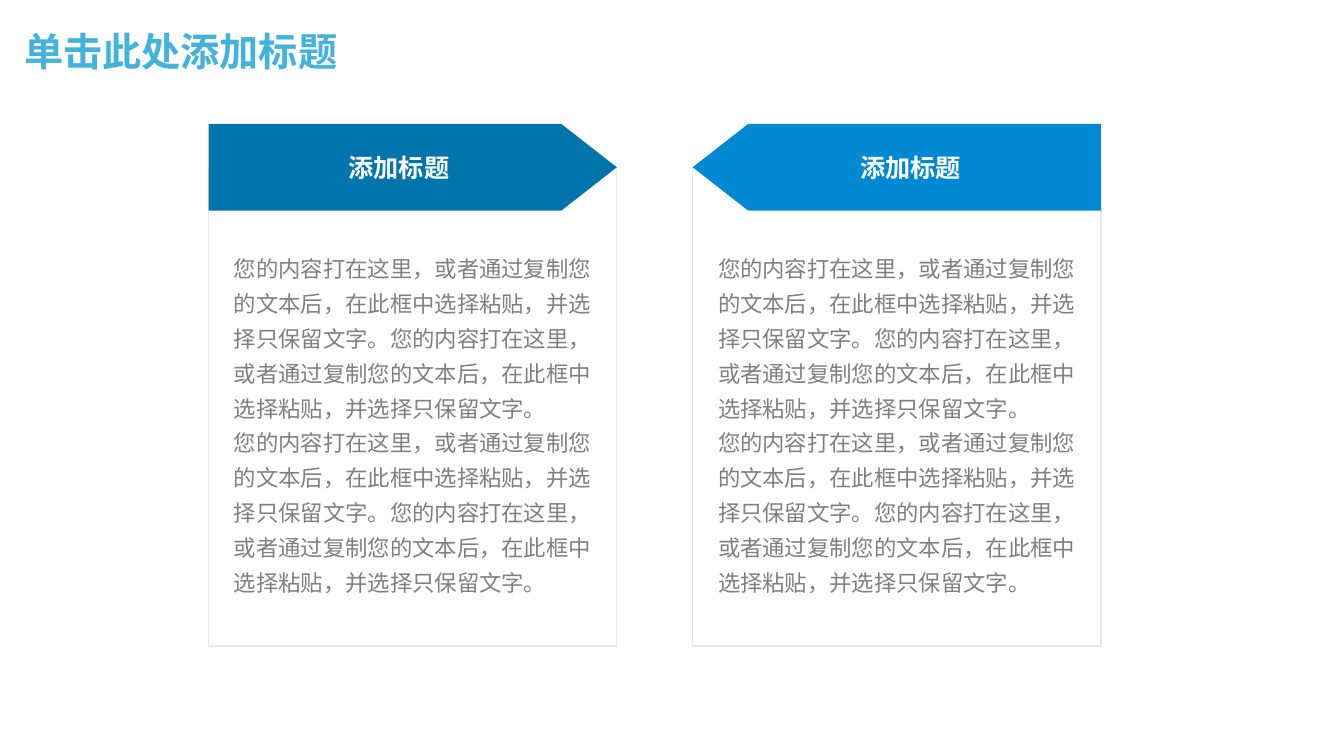
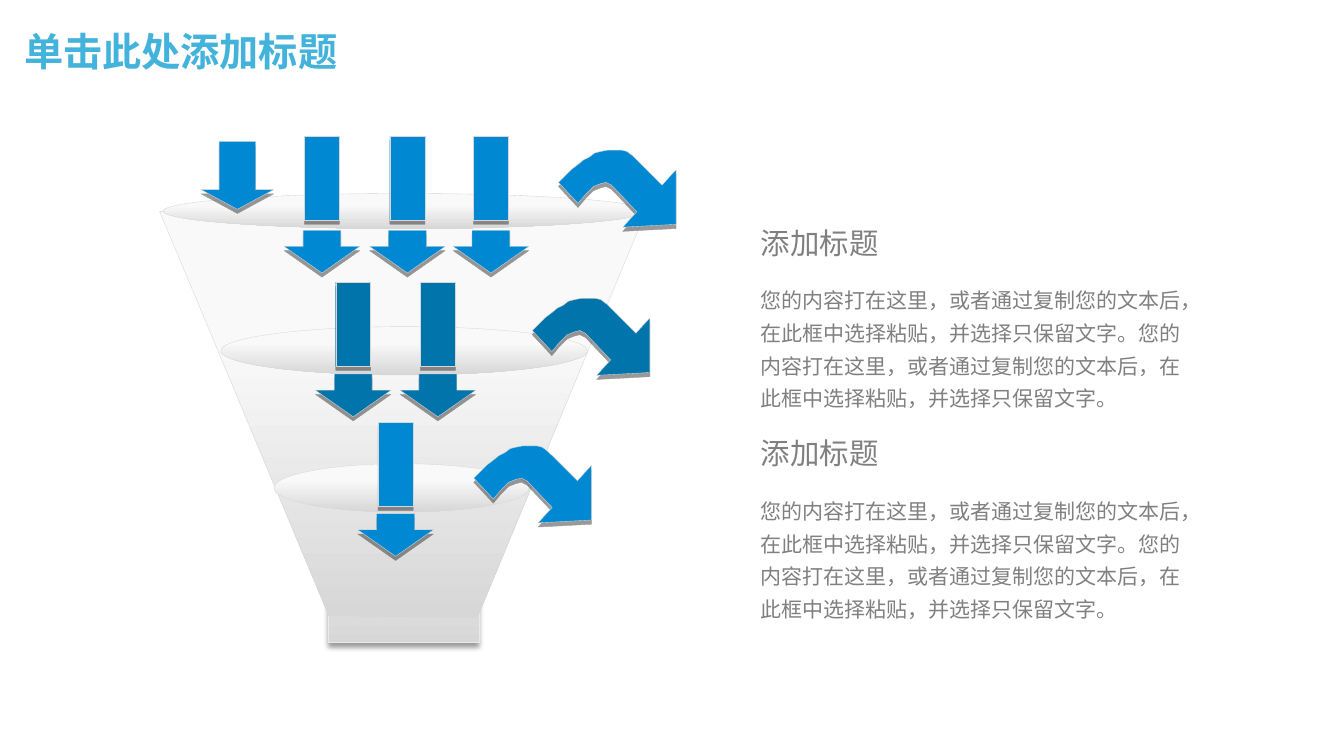
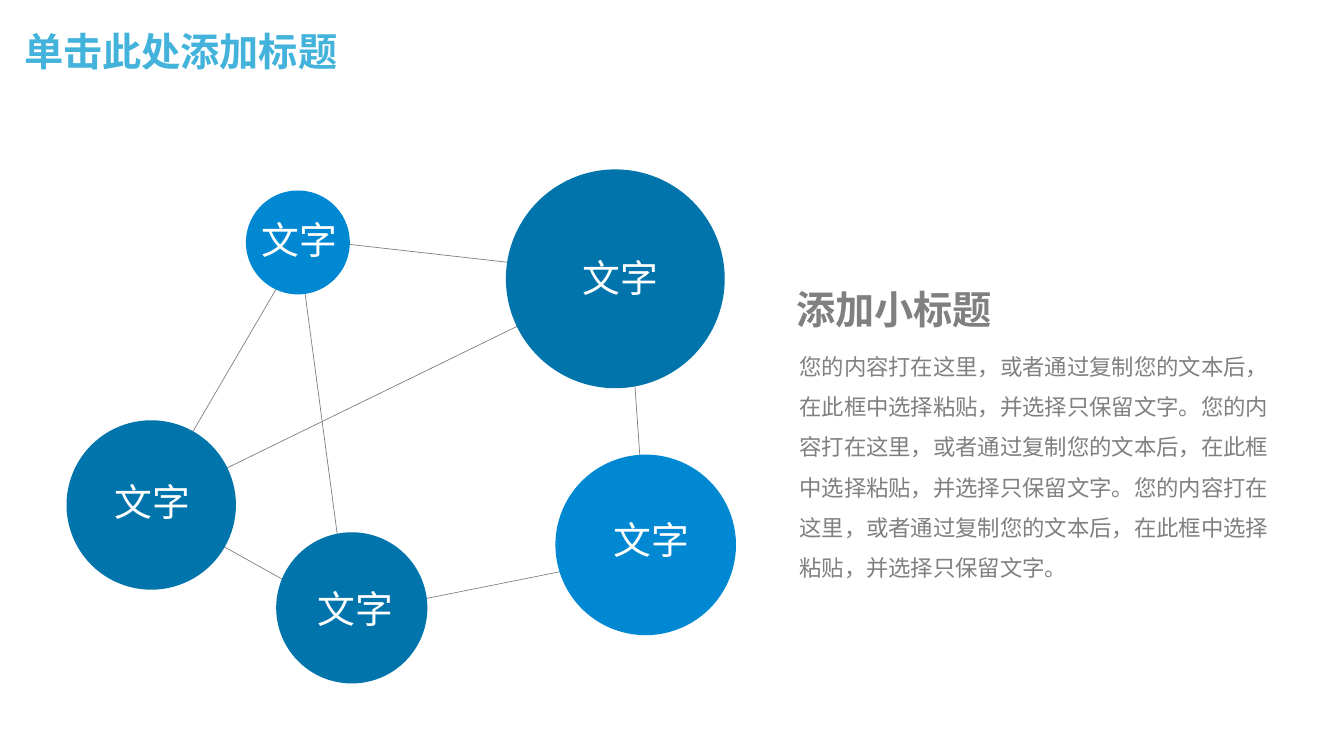
from dataclasses import dataclass
from typing import Any, Optional

from lxml import etree
from pptx import Presentation
from pptx import util as u
from pptx.dml.color import RGBColor
from pptx.enum import shapes, text
from pptx.oxml.ns import qn

Point = tuple[float, float]
Preset = shapes.MSO_SHAPE


# Theme
@dataclass(frozen=True)
class Theme:
    title: str = "43B3DC"
    deep: str = "0274AC"
    bright: str = "0089D2"
    grey: str = "808080"
    white: str = "FFFFFF"
    frame: str = "E8E8E6"
    edge: str = "D7D7D7"
    stem_edge: str = "EAEAEA"
    glass: tuple[str, str] = ("F9F9F9", "D7D7D7")
    title_font: str = "Montserrat"
    body_font: str = "Noto Sans CJK SC"
    title_size: float = 28
    circle_size: float = 27
    heading_size: float = 21
    banner_size: float = 18
    body_size: float = 16
    note_size: float = 15


THEME = Theme()
SENTENCE = "您的内容打在这里，或者通过复制您的文本后，在此框中选择粘贴，并选择只保留文字。"


# Content records: all lengths in points
@dataclass(frozen=True)
class Panel:
    left: float
    color: str
    flipped: bool


@dataclass(frozen=True)
class DropRow:
    top: float
    head_top: float
    centers: tuple[float, ...]
    color: str


@dataclass(frozen=True)
class Turn:
    left: float
    top: float
    color: str


@dataclass(frozen=True)
class Node:
    left: float
    top: float
    diameter: float
    color: str
    label_at: Point


PANELS = (Panel(149, THEME.deep, False), Panel(494.8, THEME.bright, True))

DROP_ROWS = (
    DropRow(97.2, 164.5, (230, 291, 350.7), THEME.bright),
    DropRow(201.6, 267.2, (252.3, 312.8), THEME.deep),
    DropRow(301.7, 366.9, (282.6,), THEME.bright),
)
TURNS = (
    Turn(380.2, 213.1, THEME.deep),
    Turn(338.4, 318.5, THEME.bright),
    Turn(398.9, 107.3, THEME.bright),
)
TURN_OUTLINE: tuple[Point, ...] = (
    (84.2, 14.4), (84.2, 52.8), (45.6, 55), (56, 44), (38.2, 25.2), (34.4, 23),
    (30.2, 23.6), (25.2, 26.4), (19, 31.5), (13.7, 37.6), (0, 23.2), (9.4, 13.7),
    (13, 10.6), (18, 7), (22.2, 4.8), (25.9, 2.2), (30.2, 0.7), (35, 0),
    (40, 0), (44.6, 0), (49, 1.4), (53.3, 3.8), (56.2, 6.6), (74.2, 24.6),
)
CONE: tuple[Point, ...] = ((114.5, 151.2), (234.7, 440), (341.3, 440.6), (460.8, 151.9))
CONE_RINGS = (
    (116.6, 138.2, 344.9, 25.2),
    (157.7, 233.3, 262, 34.6),
    (195.8, 331.2, 182.2, 34.6),
)

NODES = (
    Node(47.5, 300.2, 121, THEME.deep, (74.9, 338.4)),
    Node(361.4, 121, 156.3, THEME.deep, (409, 178.6)),
    Node(175.7, 136.1, 74.2, THEME.bright, (180, 151.2)),
    Node(197.3, 380.2, 108, THEME.deep, (219.6, 414.7)),
    Node(396.7, 324.7, 129, THEME.bright, (431.3, 365.8)),
)
NETWORK_RING: tuple[Point, ...] = (
    (106.6, 361.4), (218.2, 170.6), (447.8, 196.6), (461.5, 396), (247, 439.2),
)
NETWORK_CHORDS = (
    ((213.1, 173.5), (250.6, 454.3)),
    ((108, 360.7), (439.9, 198.7)),
)


# Drawing helpers
def rgb(color: str) -> RGBColor:
    return RGBColor.from_string(color)


def add_shadow(shape: Any, blur: float) -> None:
    effects = shape.element.spPr.find(qn("a:effectLst"))
    outer = etree.SubElement(
        effects, qn("a:outerShdw"), blurRad=str(u.Pt(blur)), dist=str(u.Pt(3)),
        dir="5400000", algn="t", rotWithShape="0",
    )
    black = etree.SubElement(outer, qn("a:srgbClr"), val="000000")
    etree.SubElement(black, qn("a:alpha"), val="40000")


def paint(shape: Any, fill: Any = None, line: Optional[str] = None,
          line_width: float = 0.25, shadow_blur: Optional[float] = None) -> Any:
    """Fill with a colour, a (top, bottom) gradient or nothing; set line and shadow."""
    if fill is None:
        shape.fill.background()
    elif isinstance(fill, str):
        shape.fill.solid()
        shape.fill.fore_color.rgb = rgb(fill)
    else:
        shape.fill.gradient()
        shape.fill.gradient_angle = 270
        for stop, color, position in zip(shape.fill.gradient_stops, fill, (0.33, 1)):
            stop.color.rgb = rgb(color)
            stop.position = position
    if line is None:
        shape.line.fill.background()
    else:
        shape.line.color.rgb = rgb(line)
        shape.line.width = u.Pt(line_width)
    shape.shadow.inherit = False
    if shadow_blur is not None:
        add_shadow(shape, shadow_blur)
    return shape


def add_preset(slide: Any, preset: Any, left: float, top: float,
               width: float, height: float, **look: Any) -> Any:
    shape = slide.shapes.add_shape(preset, u.Pt(left), u.Pt(top), u.Pt(width), u.Pt(height))
    return paint(shape, **look)


def add_outline(slide: Any, points: tuple[Point, ...], left: float = 0,
                top: float = 0, **look: Any) -> Any:
    builder = slide.shapes.build_freeform(*points[0], scale=float(u.Pt(1)))
    builder.add_line_segments(points[1:], close=True)
    return paint(builder.convert_to_shape(u.Pt(left), u.Pt(top)), **look)


def write(frame: Any, *paragraphs: str, size: float, color: str,
          font: str = THEME.body_font, bold: bool = False,
          align: Any = text.PP_ALIGN.LEFT, anchor: Any = text.MSO_ANCHOR.TOP,
          spacing: float = 1, wrap: bool = True, inset: Point = (7.2, 3.6)) -> None:
    frame.word_wrap = wrap
    frame.vertical_anchor = anchor
    frame.margin_left = frame.margin_right = u.Pt(inset[0])
    frame.margin_top = frame.margin_bottom = u.Pt(inset[1])
    for index, words in enumerate(paragraphs):
        paragraph = frame.add_paragraph() if index else frame.paragraphs[0]
        paragraph.alignment = align
        paragraph.line_spacing = spacing
        run = paragraph.add_run()
        run.text = words
        run.font.size = u.Pt(size)
        run.font.bold = bold
        run.font.color.rgb = rgb(color)
        run.font.name = font
        etree.SubElement(run.font._element, qn("a:ea"), typeface=THEME.body_font)


def add_text(slide: Any, left: float, top: float, width: float, height: float,
             *paragraphs: str, **style: Any) -> None:
    box = slide.shapes.add_textbox(u.Pt(left), u.Pt(top), u.Pt(width), u.Pt(height))
    write(box.text_frame, *paragraphs, **style)
    box.text_frame.auto_size = text.MSO_AUTO_SIZE.SHAPE_TO_FIT_TEXT


def add_line(slide: Any, start: Point, end: Point) -> None:
    line = slide.shapes.add_connector(
        shapes.MSO_CONNECTOR.STRAIGHT, *(u.Pt(value) for value in start + end))
    line.line.color.rgb = rgb(THEME.grey)
    line.line.width = u.Pt(0.5)
    etree.SubElement(line.element.spPr, qn("a:effectLst"))


def add_titled_slide(deck: Any) -> Any:
    slide = deck.slides.add_slide(deck.slide_layouts[5])
    title = slide.shapes.title
    title.left, title.top, title.width, title.height = map(u.Pt, (10, 10, 828, 57))
    write(title.text_frame, "单击此处添加标题", size=THEME.title_size, color=THEME.title,
          font=THEME.title_font, bold=True, anchor=text.MSO_ANCHOR.MIDDLE, spacing=0.9)
    return slide


# Slide 1: two facing panels
def build_panels(deck: Any) -> None:
    slide = add_titled_slide(deck)
    width = 291.6
    for panel in PANELS:
        add_preset(slide, Preset.RECTANGLE, panel.left, 119.5, width, 342,
                   fill=THEME.white, line=THEME.frame, line_width=1)
        banner = add_preset(slide, Preset.PENTAGON, panel.left, 88.5, width, 62,
                            fill=panel.color)
        banner.adjustments[0] = 0.64
        if panel.flipped:
            banner.element.spPr.find(qn("a:xfrm")).set("flipH", "1")
        write(banner.text_frame, "添加标题", size=THEME.banner_size, color=THEME.white,
              bold=True, align=text.PP_ALIGN.CENTER, anchor=text.MSO_ANCHOR.MIDDLE,
              wrap=False)
        add_text(slide, panel.left + 11, 172.8, 280, 259, SENTENCE * 2, SENTENCE * 2,
                 size=THEME.body_size, color=THEME.grey, spacing=1.3)


# Slide 2: funnel with falling and leaving arrows
def add_down_arrow(slide: Any, center: float, top: float, width: float,
                   height: float, head: float, **look: Any) -> None:
    arrow = add_preset(slide, Preset.DOWN_ARROW, center - width / 2, top, width, height, **look)
    arrow.adjustments[0] = 0.5
    arrow.adjustments[1] = head


def build_funnel(deck: Any) -> None:
    slide = add_titled_slide(deck)
    add_preset(slide, Preset.RECTANGLE, 234.7, 308.2, 107.3, 150.5,
               fill=THEME.glass, line=THEME.stem_edge, shadow_blur=4)
    add_outline(slide, CONE, fill=THEME.glass, line=THEME.edge)
    for ring in CONE_RINGS:
        add_preset(slide, Preset.OVAL, *ring, fill=THEME.glass, line=THEME.edge)

    for turn in TURNS:
        add_outline(slide, TURN_OUTLINE, turn.left, turn.top, fill=turn.color,
                    line=THEME.edge, shadow_blur=0)
    for row in DROP_ROWS:
        look = dict(fill=row.color, line=THEME.edge, shadow_blur=0)
        for center in row.centers:
            add_down_arrow(slide, center, row.head_top, 54, 30.5, 0.62, **look)
            add_preset(slide, Preset.RECTANGLE, center - 12.5, row.top, 25, 60, **look)
    add_down_arrow(slide, 169.6, 101, 52, 48.5, 0.29,
                   fill=THEME.bright, line=THEME.edge, shadow_blur=0)

    for top in (155.5, 306):
        add_text(slide, 533.5, top, 332, 36, "添加标题", size=THEME.heading_size,
                 color=THEME.grey, inset=(10, 5))
        add_text(slide, 533.5, top + 39.6, 332, 104, SENTENCE * 2, size=THEME.note_size,
                 color=THEME.grey, spacing=1.3, inset=(10, 5))


# Slide 3: network of circles
def build_network(deck: Any) -> None:
    slide = add_titled_slide(deck)
    for start, end in NETWORK_CHORDS:
        add_line(slide, start, end)
    add_outline(slide, NETWORK_RING, line=THEME.grey, line_width=0.5)
    for node in NODES:
        add_preset(slide, Preset.OVAL, node.left, node.top, node.diameter, node.diameter,
                   fill=node.color)
        add_text(slide, *node.label_at, 69, 40, "文字", size=THEME.circle_size,
                 color=THEME.white, wrap=False)

    add_text(slide, 559.5, 198.7, 160.5, 44, "添加小标题", size=THEME.title_size,
             color=THEME.grey, bold=True, wrap=False, inset=(9.4, 5))
    add_text(slide, 561.6, 237.6, 360.7, 242.6, SENTENCE * 3, size=THEME.body_size,
             color=THEME.grey, spacing=1.5, inset=(9.4, 5))


def main() -> None:
    deck = Presentation()
    deck.slide_width, deck.slide_height = u.Pt(960), u.Pt(540)
    build_panels(deck)
    build_funnel(deck)
    build_network(deck)
    deck.save("out.pptx")


if __name__ == "__main__":
    main()
